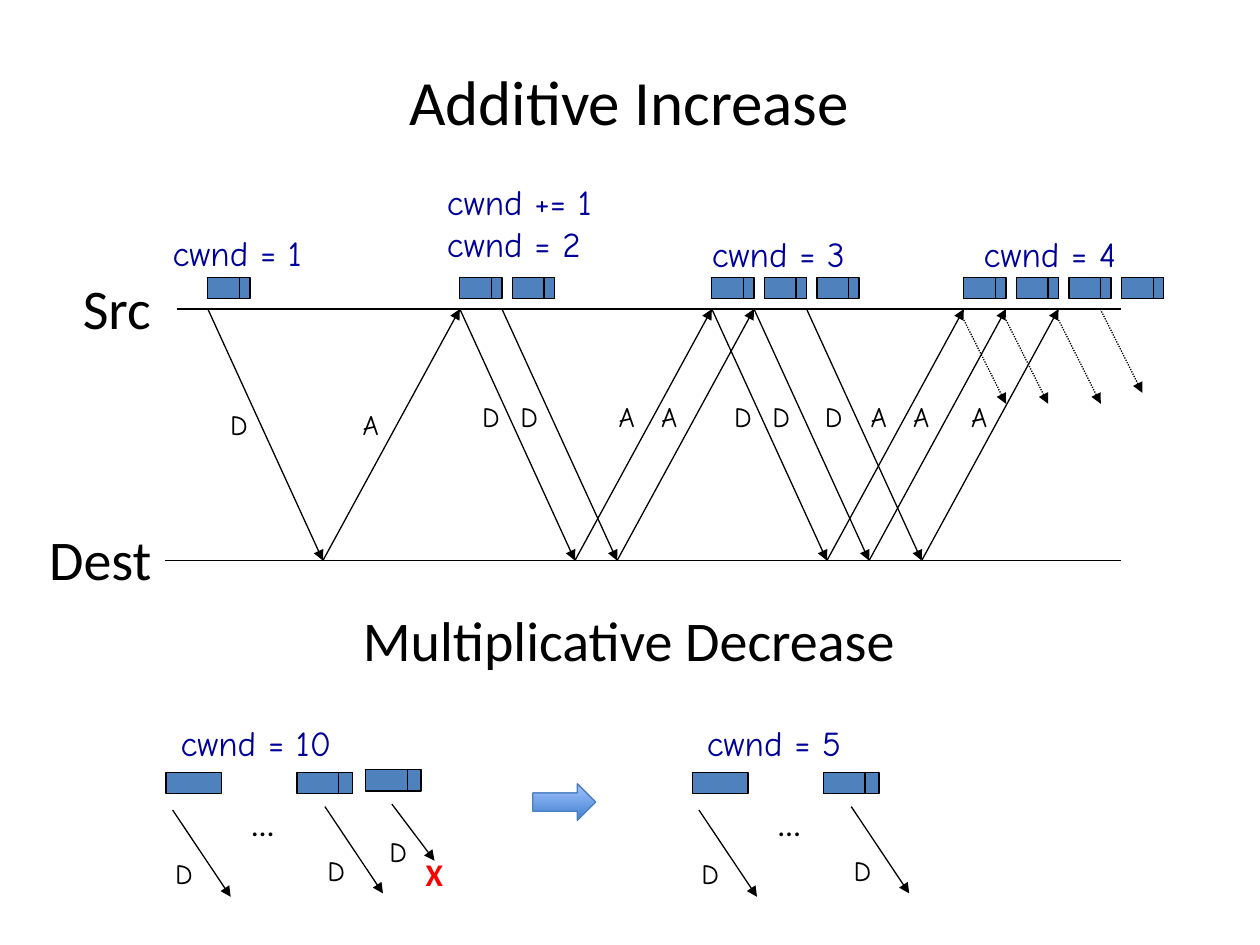
from lxml import etree
from pptx import Presentation
from pptx.dml.color import RGBColor
from pptx.enum.dml import MSO_LINE
from pptx.enum.shapes import MSO_CONNECTOR, MSO_SHAPE
from pptx.enum.text import MSO_ANCHOR, MSO_AUTO_SIZE, PP_ALIGN
from pptx.oxml.ns import qn
from pptx.util import Cm, Pt

COLORS = {
    "ink": "000000",
    "packet": "4F81BD",
    "window": "000099",
    "lost": "FF0000",
    "arrow_line": "4B7EBC",
    "arrow_bottom": "3F80CE",
    "arrow_top": "A4C4FF",
}
BODY_FONT, NOTE_FONT = "Calibri", "Comic Neue"

# All lengths are in centimetres.
SOURCE_Y, DEST_Y = 6.23, 11.3
FIRST_SEND, ROUND_TRIP, TRAVEL = 4.19, 5.08, 2.32
PACKET_STEP, PACKET_WIDTH = 1.06, 0.85
SEND_OFFSETS = (0, 0.85, 1.91, 2.75)
DATA_LABELS = (0.2, 0.97, 2.03)
ACK_LABELS = ((2.87,), (2.95, 3.81), (2.95, 3.81, 4.98))


def color(name):
    return RGBColor.from_string(COLORS[name])


class Diagram:
    """Holds the current slide and the style shared by its elements."""

    line_width = Pt(0.75)

    def __init__(self, slide):
        self.slide = slide

    def format_text(self, frame, text, size, font, ink, bold=False):
        frame.text = text
        for paragraph in frame.paragraphs:
            for run in paragraph.runs:
                run.font.name = font
                run.font.size = Pt(size)
                run.font.bold = bold
                run.font.color.rgb = color(ink)

    def heading(self, shape, text, top, size):
        shape.left, shape.top = Cm(1.25), Cm(top)
        shape.width, shape.height = Cm(22.86), Cm(3.18)
        frame = shape.text_frame
        self.format_text(frame, text, size, BODY_FONT, "ink")
        frame.word_wrap = True
        frame.vertical_anchor = MSO_ANCHOR.MIDDLE
        frame.paragraphs[0].alignment = PP_ALIGN.CENTER

    def title(self, text):
        self.heading(self.slide.shapes.title, text, 0.43, 36)

    def subtitle(self, text):
        box = self.slide.shapes.add_textbox(0, 0, 0, 0)
        self.heading(box, text, 11.3, 32)

    def label(self, text, left, top, width, height, size,
              font=BODY_FONT, ink="ink", bold=False, wrap=False):
        box = self.slide.shapes.add_textbox(
            Cm(left), Cm(top), Cm(width), Cm(height))
        frame = box.text_frame
        frame.word_wrap = wrap
        frame.auto_size = MSO_AUTO_SIZE.SHAPE_TO_FIT_TEXT
        self.format_text(frame, text, size, font, ink, bold)

    def letter(self, text, left, top):
        self.label(text, left, top, 0.91, 0.94, 16, NOTE_FONT)

    def window(self, text, left, top, width, height=1.09, wrap=False):
        self.label(text, left, top, width, height, 20,
                   NOTE_FONT, "window", wrap=wrap)

    def line(self, x1, y1, x2, y2, arrow=False, dotted=False):
        connector = self.slide.shapes.add_connector(
            MSO_CONNECTOR.STRAIGHT, Cm(x1), Cm(y1), Cm(x2), Cm(y2))
        connector.line.color.rgb = color("ink")
        connector.line.width = self.line_width
        if dotted:
            connector.line.dash_style = MSO_LINE.ROUND_DOT
        properties = connector._element.spPr
        if arrow:
            etree.SubElement(properties.find(qn("a:ln")),
                             qn("a:tailEnd"), type="triangle")
        etree.SubElement(properties, qn("a:effectLst"))

    def shape(self, kind, left, top, width, height, outline):
        shape = self.slide.shapes.add_shape(
            kind, Cm(left), Cm(top), Cm(width), Cm(height))
        shape.shadow.inherit = False
        shape.line.color.rgb = color(outline)
        shape.line.width = self.line_width
        return shape

    def packet(self, left, top, width, header=True):
        height = 0.43
        body = self.shape(MSO_SHAPE.RECTANGLE, left, top, width, height, "ink")
        body.fill.solid()
        body.fill.fore_color.rgb = color("packet")
        if header:
            split = left + 0.75 * width
            self.line(split, top, split, top + height)

    def block_arrow(self, left, top, width, height):
        arrow = self.shape(MSO_SHAPE.RIGHT_ARROW, left, top, width, height,
                           "arrow_line")
        arrow.fill.gradient()
        arrow.fill.gradient_angle = 90
        for stop, name in zip(arrow.fill.gradient_stops,
                              ("arrow_bottom", "arrow_top")):
            stop.color.rgb = color(name)


def draw_additive_increase(diagram):
    diagram.line(3.56, SOURCE_Y, 22.6, SOURCE_Y)
    diagram.line(3.33, DEST_Y, 22.6, DEST_Y)
    diagram.label("Src", 1.42, 5.38, 1.9, 1.63, 32)
    diagram.label("Dest", 0.74, 10.44, 2.62, 1.63, 32)

    for trip in range(4):
        start = FIRST_SEND + trip * ROUND_TRIP
        for index in range(trip + 1):
            diagram.packet(start + index * PACKET_STEP, 5.59, PACKET_WIDTH)

    for trip, ack_labels in enumerate(ACK_LABELS):
        start = FIRST_SEND + trip * ROUND_TRIP
        label_top = 7.92 if trip else 8.1
        for index, ack_label in enumerate(ack_labels):
            sent = start + SEND_OFFSETS[index]
            received = sent + TRAVEL
            diagram.line(sent, SOURCE_Y, received, DEST_Y, arrow=True)
            diagram.line(received, DEST_Y, sent + ROUND_TRIP, SOURCE_Y,
                         arrow=True)
            diagram.letter("D", start + DATA_LABELS[index], label_top)
            diagram.letter("A", start + ack_label, label_top)

    last_start = FIRST_SEND + 3 * ROUND_TRIP
    for offset, top in zip(SEND_OFFSETS, (6.45, 6.45, 6.45, SOURCE_Y)):
        sent = last_start + offset
        diagram.line(sent, top, sent + 0.85, top + 1.69,
                     arrow=True, dotted=True)

    diagram.window("cwnd = 1", 3.23, 4.55, 3.43, wrap=True)
    diagram.window("cwnd += 1\ncwnd = 2", 8.76, 3.51, 4.7, 1.96, wrap=True)
    diagram.window("cwnd = 3", 14.1, 4.57, 3.35)
    diagram.window("cwnd = 4", 19.58, 4.57, 3.35)


def draw_flight(diagram, shift, window_text):
    """Draw the first and last packet of a window, with dots between them."""
    diagram.window(window_text, 3.39 + shift, 14.43, 4.55, wrap=True)
    diagram.packet(3.35 + shift, 15.57, 1.12, header=False)
    diagram.packet(5.99 + shift, 15.57, 1.12)
    for left, top in ((3.48, 16.33), (6.55, 16.26)):
        x = left + shift
        diagram.line(x, top, x + 1.17, top + 1.75, arrow=True)
        diagram.letter("D", x - 0.2, top + 0.82)
    diagram.label("…", 4.83 + shift, 16.1, 0.97, 1.02, 18)


def draw_multiplicative_decrease(diagram):
    draw_flight(diagram, 0, "cwnd = 10")
    diagram.packet(7.37, 15.52, 1.12)
    diagram.line(7.9, 16.21, 8.76, 17.35, arrow=True)
    diagram.letter("D", 7.6, 16.7)
    diagram.label("X", 8.33, 17.12, 0.86, 1.02, 18, ink="lost", bold=True)
    diagram.block_arrow(10.74, 15.8, 1.27, 0.74)
    draw_flight(diagram, 10.61, "cwnd = 5")


def main():
    presentation = Presentation()
    presentation.slide_width = Cm(25.4)
    presentation.slide_height = Cm(19.05)
    slide = presentation.slides.add_slide(presentation.slide_layouts[5])
    diagram = Diagram(slide)
    diagram.title("Additive Increase")
    draw_additive_increase(diagram)
    diagram.subtitle("Multiplicative Decrease")
    draw_multiplicative_decrease(diagram)
    presentation.save("out.pptx")


if __name__ == "__main__":
    main()
